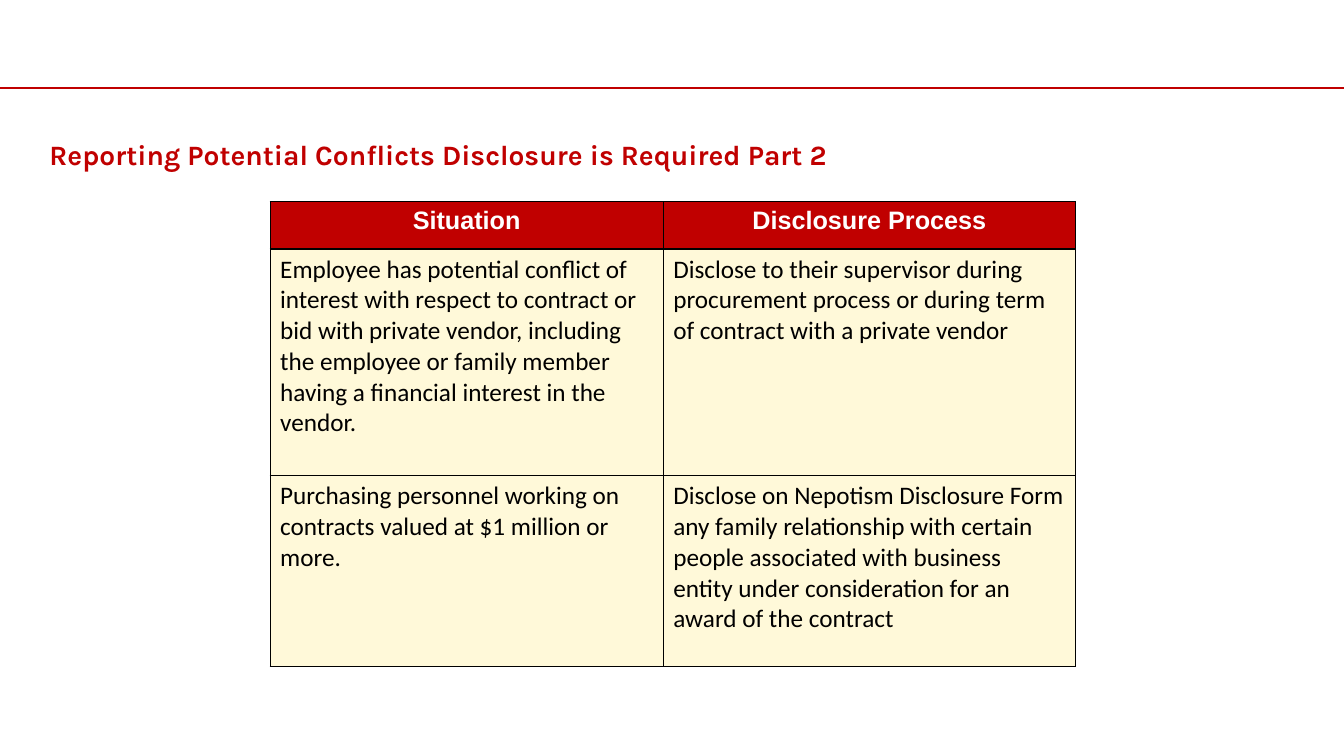
"""Build the slide on disclosing potential conflicts of interest."""
from dataclasses import dataclass

from lxml import etree
from pptx import Presentation
from pptx import util as u
from pptx.dml.color import RGBColor
from pptx.enum import shapes, text
from pptx.oxml import ns

WIDTH, HEIGHT = u.Inches(13.33), u.Inches(7.5)
RED, CREAM, WHITE, BLACK = "C00000", "FFF9D9", "FFFFFF", "000000"
COLUMNS = (29.25, 30.68)
ROWS = (6.27, 30, 25.2)


@dataclass(frozen=True)
class Style:
    """Look of a piece of text and the fill behind it."""
    name: str
    size: int
    color: str
    bold: bool
    align: text.PP_ALIGN = text.PP_ALIGN.LEFT
    fill: str = WHITE


TITLE = Style("Karla", 20, RED, True)
HEADER = Style("Arial", 18, WHITE, True, text.PP_ALIGN.CENTER, RED)
BODY = Style("Calibri", 18, BLACK, False, fill=CREAM)

CONTENT = (
    ("Situation", "Disclosure Process"),
    ("Employee has potential conflict of interest with respect to contract or bid with "
     "private vendor, including the employee or family member having a financial "
     "interest in the vendor.",
     "Disclose to their supervisor during procurement process or during term of "
     "contract with a private vendor"),
    ("Purchasing personnel working on contracts valued at $1 million or more.",
     "Disclose on Nepotism Disclosure Form any family relationship with certain people "
     "associated with business entity under consideration for an award of the contract"),
)


def across(percent: float) -> int:
    """Return a share of the slide's width."""
    return round(WIDTH * percent / 100)


def down(percent: float) -> int:
    """Return a share of the slide's height."""
    return round(HEIGHT * percent / 100)


def paint(target, color: str) -> None:
    """Colour a font or a solid fill."""
    target.fill.solid()
    target.fill.fore_color.rgb = RGBColor.from_string(color)


def write(frame, words: str, style: Style) -> None:
    """Put one styled paragraph in a text frame."""
    para = frame.paragraphs[0]
    para.alignment = style.align
    span = para.add_run()
    span.text = words
    formats = {"name": style.name, "size": u.Pt(style.size), "bold": style.bold}
    for key, value in formats.items():
        setattr(span.font, key, value)
    paint(span.font, style.color)


def add_rule(page) -> None:
    """Draw the red line across the top of the slide."""
    rule = page.shapes.add_connector(
        shapes.MSO_CONNECTOR.STRAIGHT, 0, down(11.6), WIDTH, down(11.6))
    rule.line.width = u.Pt(1.5)
    paint(rule.line, RED)
    etree.SubElement(rule._element.spPr, ns.qn("a:effectLst"))


def add_title(page, words: str) -> None:
    """Place and fill the title placeholder."""
    box = page.shapes.title
    place = {"left": across(2.93), "top": down(17.2),
             "width": across(94.2), "height": down(7.6)}
    for key, value in place.items():
        setattr(box, key, value)
    layout = {"word_wrap": True, "auto_size": text.MSO_AUTO_SIZE.NONE,
              "vertical_anchor": text.MSO_ANCHOR.TOP, "margin_top": u.Inches(0.07)}
    for key, value in layout.items():
        setattr(box.text_frame, key, value)
    write(box.text_frame, words, TITLE)


def add_borders(cell) -> None:
    """Outline a cell with thin black lines."""
    properties = cell._tc.get_or_add_tcPr()
    for place, side in enumerate(("lnL", "lnR", "lnT", "lnB")):
        edge = etree.Element(ns.qn(f"a:{side}"), w=str(u.Pt(1)))
        solid = etree.SubElement(edge, ns.qn("a:solidFill"))
        etree.SubElement(solid, ns.qn("a:srgbClr"), val=BLACK)
        properties.insert(place, edge)


def add_process_table(page) -> None:
    """Draw the table of situations and disclosure processes."""
    table = page.shapes.add_table(
        len(ROWS), len(COLUMNS), across(20.1), down(26.67),
        across(sum(COLUMNS)), down(sum(ROWS))).table
    table.first_row = table.horz_banding = False
    for column, share in zip(table.columns, COLUMNS):
        column.width = across(share)
    for index, (row, share) in enumerate(zip(table.rows, ROWS)):
        row.height = down(share)
        style = BODY if index else HEADER
        for cell, words in zip(row.cells, CONTENT[index]):
            write(cell.text_frame, words, style)
            paint(cell, style.fill)
            add_borders(cell)


def main() -> None:
    """Build and save the deck."""
    deck = Presentation()
    deck.slide_width, deck.slide_height = WIDTH, HEIGHT
    page = deck.slides.add_slide(deck.slide_layouts.get_by_name("Title Only"))
    paint(page.background, WHITE)
    add_rule(page)
    add_title(page, "Reporting Potential Conflicts Disclosure is Required Part 2")
    add_process_table(page)
    deck.save("out.pptx")


if __name__ == "__main__":
    main()
